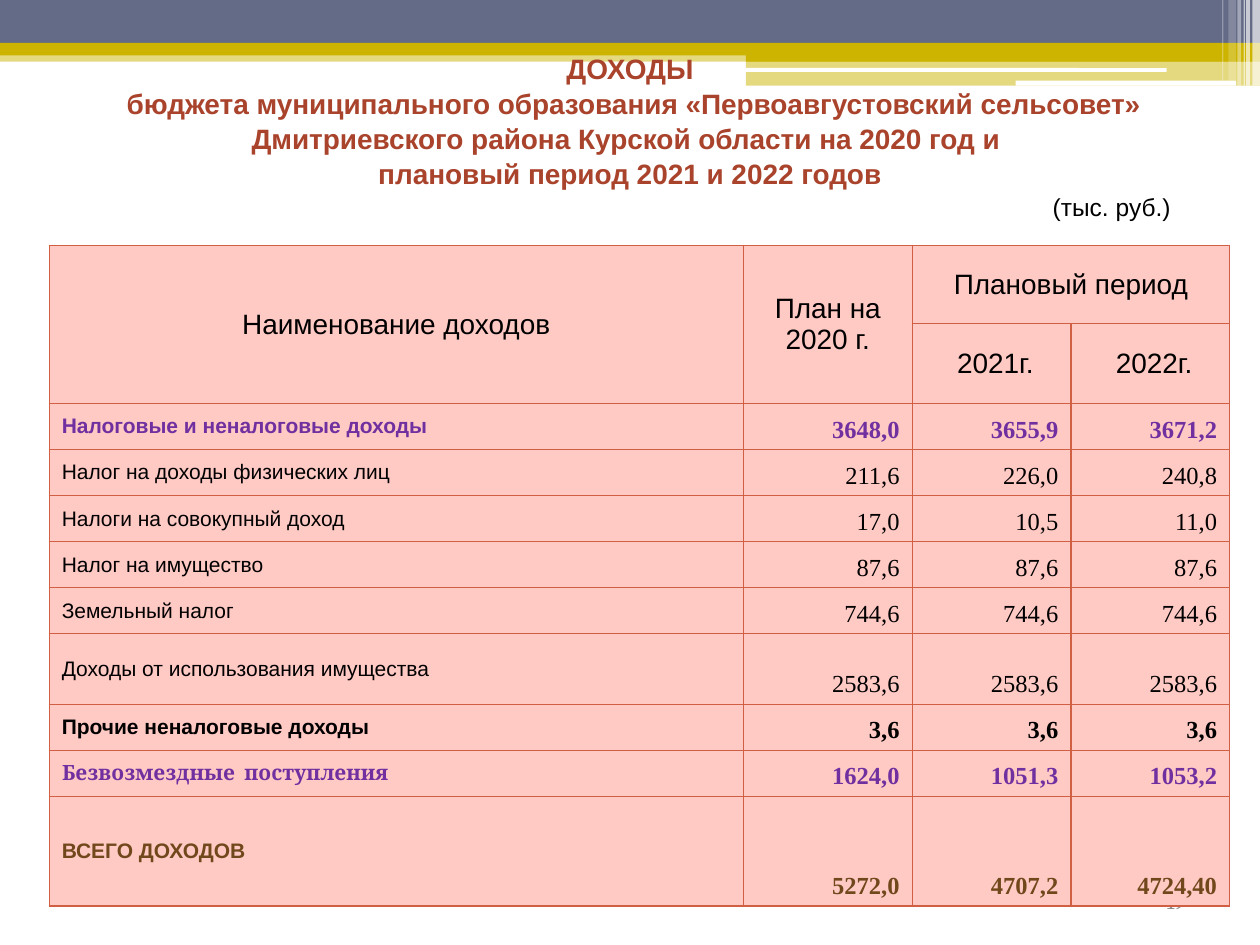
from lxml.etree import SubElement
from pptx import Presentation
from pptx.dml.color import RGBColor
from pptx.enum.shapes import MSO_SHAPE as Shape
from pptx.enum.text import MSO_ANCHOR as Anchor, MSO_AUTO_SIZE as AutoSize, PP_ALIGN as Align
from pptx.oxml.ns import qn
from pptx.util import Inches, Pt

COLORS = {
    "slate": "646B86", "gold": "CCB400", "white": "FFFFFF", "title": "A9432B",
    "black": "000000", "purple": "7030A0", "brown": "71481C", "gray": "8C8C8C",
    "cell": "FFC9C4", "border": "D05F44",
}

TITLE = [
    "ДОХОДЫ",
    " бюджета муниципального образования «Первоавгустовский сельсовет» "
    "Дмитриевского района Курской области на 2020 год и ",
    "плановый период 2021 и 2022 годов",
]
UNITS = "(тыс. руб.)"
PAGE_NUMBER = "19"

# left, top, width, height, color, opacity in percent
BANDS = [
    (0, 0.4, 10, 0.09, "gold", 50),
    (0, 0, 10, 0.34, "slate", 100),
    (0, 0.34, 10, 0.1, "gold", 100),
    (5.92, 0.39, 4.08, 0.1, "gold", 100),
    (5.92, 0.48, 4.08, 0.2, "gold", 50),
]
ROUNDED_BARS = [
    (5.91, 0.54, 3.35, 0.03, "white", 100),
    (8.06, 0.64, 1.75, 0.04, "white", 100),
]
# left, width, height, opacity in percent
STRIPES = [
    (9.94, 0.06, 0.68, 65), (9.89, 0.03, 0.68, 65), (9.87, 0.01, 0.68, 60),
    (9.82, 0.03, 0.68, 40), (9.75, 0.06, 0.64, 20), (9.7, 0.01, 0.64, 30),
]

# row, column, text, last row, last column
HEADERS = [
    (0, 0, "Наименование доходов", 1, 0),
    (0, 1, "План на 2020 г.", 1, 1),
    (0, 2, "Плановый период", 0, 3),
    (1, 2, " 2021г.", 1, 2),
    (1, 3, " 2022г.", 1, 3),
]
# name, values, color, bold, font of the name
INCOMES = [
    ("Налоговые и неналоговые доходы", ("3648,0", "3655,9", "3671,2"), "purple", True, "Arial"),
    ("Налог на доходы физических лиц", ("211,6", "226,0", "240,8"), "black", False, "Arial"),
    ("Налоги на совокупный доход", ("17,0", "10,5", "11,0"), "black", False, "Arial"),
    ("Налог на имущество", ("87,6", "87,6", "87,6"), "black", False, "Arial"),
    ("Земельный налог", ("744,6", "744,6", "744,6"), "black", False, "Arial"),
    ("Доходы от использования имущества", ("2583,6", "2583,6", "2583,6"), "black", False, "Arial"),
    ("Прочие неналоговые доходы", ("3,6", "3,6", "3,6"), "black", True, "Arial"),
    ("Безвозмездные  поступления", ("1624,0", "1051,3", "1053,2"), "purple", True, "Cambria"),
    ("ВСЕГО ДОХОДОВ", ("5272,0", "4707,2", "4724,40"), "brown", True, "Arial"),
]
COLUMN_WIDTHS = [5.51, 1.34, 1.26, 1.26]
PLAIN_ROW = 2.56 / 7
ROW_HEIGHTS = [0.62, 0.63] + [PLAIN_ROW] * 5 + [0.56] + [PLAIN_ROW] * 2 + [0.87]


def rgb(name):
    return RGBColor.from_string(COLORS[name])


def add_block(slide, kind, left, top, width, height, color, opacity):
    block = slide.shapes.add_shape(kind, *map(Inches, (left, top, width, height)))
    block.shadow.inherit = False
    block.line.fill.background()
    block.fill.solid()
    block.fill.fore_color.rgb = rgb(color)
    if opacity < 100:
        color_node = block.fill._xPr.find(qn("a:solidFill"))[0]
        SubElement(color_node, qn("a:alpha"), val=str(opacity * 1000))


def write(frame, lines, size, color, align, font="Arial", bold=False, anchor=Anchor.MIDDLE):
    frame.word_wrap = True
    frame.vertical_anchor = anchor
    frame.text = "\n".join(lines)
    for para in frame.paragraphs:
        para.alignment = align
        for span in para.runs:
            span.font.name = font
            span.font.size = Pt(size)
            span.font.bold = bold
            span.font.color.rgb = rgb(color)


def add_text(slide, place, *text, **style):
    box = slide.shapes.add_textbox(*map(Inches, place))
    write(box.text_frame, *text, **style)


def style_cell(cell):
    properties = cell._tc.get_or_add_tcPr()
    for side in ("lnL", "lnR", "lnT", "lnB"):
        line = SubElement(properties, qn(f"a:{side}"), w=str(Pt(0.75)))
        fill = SubElement(line, qn("a:solidFill"))
        SubElement(fill, qn("a:srgbClr"), val=COLORS["border"])
    cell.fill.solid()
    cell.fill.fore_color.rgb = rgb("cell")


def write_cell(cell, text, *style, anchor=Anchor.MIDDLE):
    write(cell.text_frame, [text], *style)
    cell.vertical_anchor = anchor


def add_income_table(slide):
    frame = slide.shapes.add_table(
        len(ROW_HEIGHTS), len(COLUMN_WIDTHS), Inches(0.39), Inches(1.95),
        Inches(sum(COLUMN_WIDTHS)), Inches(sum(ROW_HEIGHTS)))
    table = frame.table
    for column, width in zip(table.columns, COLUMN_WIDTHS):
        column.width = Inches(width)
    for row, height in zip(table.rows, ROW_HEIGHTS):
        row.height = Inches(height)
    for cell in table.iter_cells():
        style_cell(cell)
    for row, column, text, last_row, last_column in HEADERS:
        cell = table.cell(row, column)
        if (row, column) != (last_row, last_column):
            cell.merge(table.cell(last_row, last_column))
        write_cell(cell, text, 16, "black", Align.CENTER)
    for row, (name, values, color, bold, font) in enumerate(INCOMES, start=2):
        write_cell(table.cell(row, 0), name, 12, color, Align.LEFT, font, bold)
        for column, value in enumerate(values, start=1):
            write_cell(table.cell(row, column), value, 14, color, Align.RIGHT,
                       "Times New Roman", bold, anchor=Anchor.BOTTOM)


def place_title(slide):
    title = slide.shapes.title
    title.left, title.top, title.width, title.height = map(Inches, (0.31, 0.35, 9.38, 1.18))
    write(title.text_frame, TITLE, 16, "title", Align.CENTER, bold=True, anchor=Anchor.TOP)
    title.text_frame.auto_size = AutoSize.NONE
    for para in title.text_frame.paragraphs:
        para.line_spacing = 1.04
    # The title stands in front of the bands
    slide.shapes._spTree.append(title._element)


def main():
    deck = Presentation()
    deck.slide_width, deck.slide_height = Inches(10), Inches(7.5)
    slide = deck.slides.add_slide(deck.slide_layouts[5])
    slide.background.fill.solid()
    slide.background.fill.fore_color.rgb = rgb("white")
    for band in BANDS:
        add_block(slide, Shape.RECTANGLE, *band)
    for bar in ROUNDED_BARS:
        add_block(slide, Shape.ROUNDED_RECTANGLE, *bar)
    for left, width, height, opacity in STRIPES:
        add_block(slide, Shape.RECTANGLE, left, 0, width, height, "white", opacity)
    add_text(slide, (7.17, 6.95, 2.33, 0.4), [PAGE_NUMBER], 12, "gray", Align.RIGHT, font="Cambria")
    place_title(slide)
    add_text(slide, (7.39, 1.47, 2, 0.34), [UNITS], 14, "black", Align.RIGHT)
    add_income_table(slide)
    deck.save("out.pptx")


if __name__ == "__main__":
    main()
